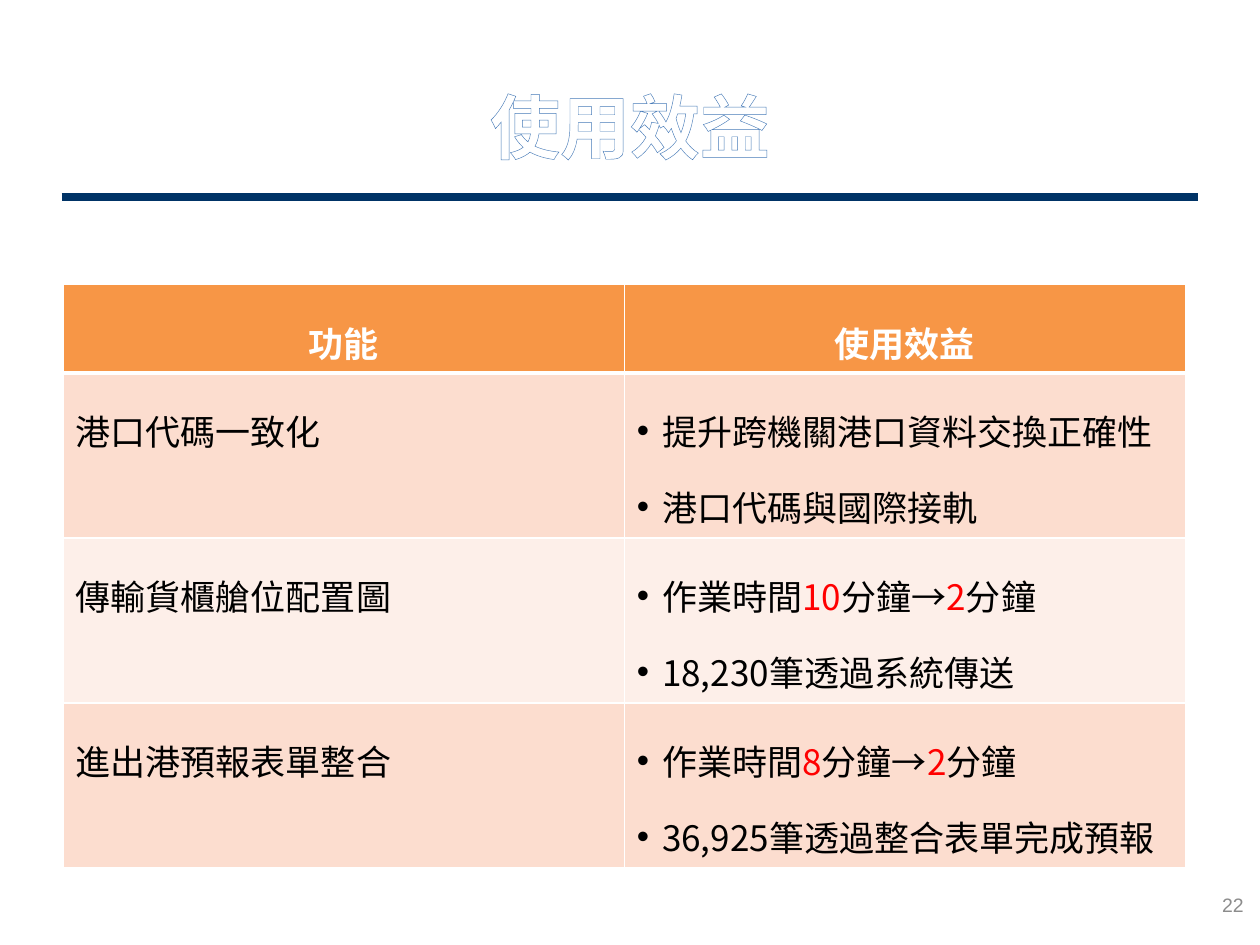
from dataclasses import dataclass

import lxml.etree as etree
import pptx
import pptx.dml.color
import pptx.enum.shapes
import pptx.enum.text
import pptx.oxml.ns
import pptx.util

Inches = pptx.util.Inches
Pt = pptx.util.Pt
qn = pptx.oxml.ns.qn
ALIGN = pptx.enum.text.PP_ALIGN

CJK_FONT = "Noto Sans CJK SC"
COLORS = {
    "white": "FFFFFF",
    "black": "000000",
    "highlight": "FF0000",
    "rule": "003366",
    "title_outline": "467AB8",
    "page_number": "8C8C8C",
    "header": "F79646",
    "band_dark": "FCDDCF",
    "band_light": "FDEFE9",
}


@dataclass
class Benefit:
    """One table row; odd pieces of a split effect line are highlighted."""
    function: str
    effects: list[list[str]]


HEADERS = ["功能", "使用效益"]
BENEFITS = [
    Benefit("港口代碼一致化", [["提升跨機關港口資料交換正確性"], ["港口代碼與國際接軌"]]),
    Benefit("傳輸貨櫃艙位配置圖",
            [["作業時間", "10", "分鐘→", "2", "分鐘"], ["18,230筆透過系統傳送"]]),
    Benefit("進出港預報表單整合",
            [["作業時間", "8", "分鐘→", "2", "分鐘"], ["36,925筆透過整合表單完成預報"]]),
]


def rgb(name: str) -> pptx.dml.color.RGBColor:
    return pptx.dml.color.RGBColor.from_string(COLORS[name])


def add_solid_line(parent, tag: str, color: str, width: float, position: int) -> None:
    line = etree.Element(qn(tag), w=str(Pt(width)))
    fill = etree.SubElement(line, qn("a:solidFill"))
    etree.SubElement(fill, qn("a:srgbClr"), val=COLORS[color])
    parent.insert(position, line)


def add_bullet(paragraph, indent: float) -> None:
    properties = paragraph._p.get_or_add_pPr()
    properties.set("marL", str(Inches(indent)))
    properties.set("indent", str(-Inches(indent)))
    etree.SubElement(properties, qn("a:buFont"), typeface="Arial")
    etree.SubElement(properties, qn("a:buChar"), char="•")


def write_text(paragraph, text: str, *, size: float = 20, color: str = "black",
               bold: bool = False, font: str = CJK_FONT, align=ALIGN.LEFT,
               spacing: float | None = None, outline: str | None = None) -> None:
    paragraph.alignment = align
    if spacing:
        paragraph.line_spacing = spacing
    run = paragraph.add_run()
    run.text = text
    run.font.size = Pt(size)
    run.font.bold = bold
    run.font.name = font
    run.font.color.rgb = rgb(color)
    properties = run._r.get_or_add_rPr()
    east_asian = etree.Element(qn("a:ea"), typeface=font)
    properties.find(qn("a:latin")).addnext(east_asian)
    if outline:
        add_solid_line(properties, "a:ln", outline, 0.83, 0)


def add_label(slide, left: float, top: float, width: float, height: float,
              text: str, **text_format) -> None:
    box = slide.shapes.add_textbox(Inches(left), Inches(top), Inches(width), Inches(height))
    frame = box.text_frame
    frame.word_wrap = True
    frame.vertical_anchor = pptx.enum.text.MSO_ANCHOR.MIDDLE
    write_text(frame.paragraphs[0], text, **text_format)


def add_rule(slide) -> None:
    rule = slide.shapes.add_connector(
        pptx.enum.shapes.MSO_CONNECTOR.STRAIGHT,
        Inches(0.49), Inches(1.565), Inches(9.51), Inches(1.565))
    rule.line.color.rgb = rgb("rule")
    rule.line.width = Pt(4.5)
    etree.SubElement(rule._element.spPr, qn("a:effectLst"))


def style_cell(cell, fill: str, top: float = 1, bottom: float = 1) -> None:
    properties = cell._tc.get_or_add_tcPr()
    widths = {"a:lnL": 1, "a:lnR": 1, "a:lnT": top, "a:lnB": bottom}
    for position, (side, width) in enumerate(widths.items()):
        add_solid_line(properties, side, "white", width, position)
    cell.fill.solid()
    cell.fill.fore_color.rgb = rgb(fill)


def write_effects(cell, effects: list[list[str]]) -> None:
    frame = cell.text_frame
    for index, pieces in enumerate(effects):
        paragraph = frame.add_paragraph() if index else frame.paragraphs[0]
        add_bullet(paragraph, 0.2)
        for order, piece in enumerate(pieces):
            write_text(paragraph, piece, spacing=1.5,
                       color="highlight" if order % 2 else "black")


def add_benefit_table(slide) -> None:
    row_heights = [0.7] + [1.31] * len(BENEFITS)
    table = slide.shapes.add_table(
        len(row_heights), len(HEADERS), Inches(0.5), Inches(2.26),
        Inches(8.91), Inches(sum(row_heights))).table
    for row, height in zip(table.rows, row_heights):
        row.height = Inches(height)

    # Header row
    for column, header in enumerate(HEADERS):
        cell = table.cell(0, column)
        style_cell(cell, "header", bottom=3)
        write_text(cell.text_frame.paragraphs[0], header, color="white", bold=True,
                   align=ALIGN.CENTER, spacing=1.5)

    # Banded body rows
    for row, benefit in enumerate(BENEFITS, start=1):
        function_cell, effect_cell = table.cell(row, 0), table.cell(row, 1)
        for cell in (function_cell, effect_cell):
            style_cell(cell, "band_dark" if row % 2 else "band_light",
                       top=3 if row == 1 else 1)
        write_text(function_cell.text_frame.paragraphs[0], benefit.function, spacing=1.5)
        write_effects(effect_cell, benefit.effects)


def main() -> None:
    presentation = pptx.Presentation()
    presentation.slide_width = Inches(10)
    presentation.slide_height = Inches(7.5)
    slide = presentation.slides.add_slide(presentation.slide_layouts[6])

    # Title and rule
    add_rule(slide)
    add_label(slide, 0.5, 0.44, 9, 1.11, "使用效益", size=40, color="white", bold=True,
              align=ALIGN.CENTER, outline="title_outline")

    # Page number
    add_label(slide, 7.64, 6.98, 2.33, 0.4, "22", size=11.1, color="page_number",
              font="Arial", align=ALIGN.RIGHT)

    add_benefit_table(slide)
    presentation.save("out.pptx")


if __name__ == "__main__":
    main()
